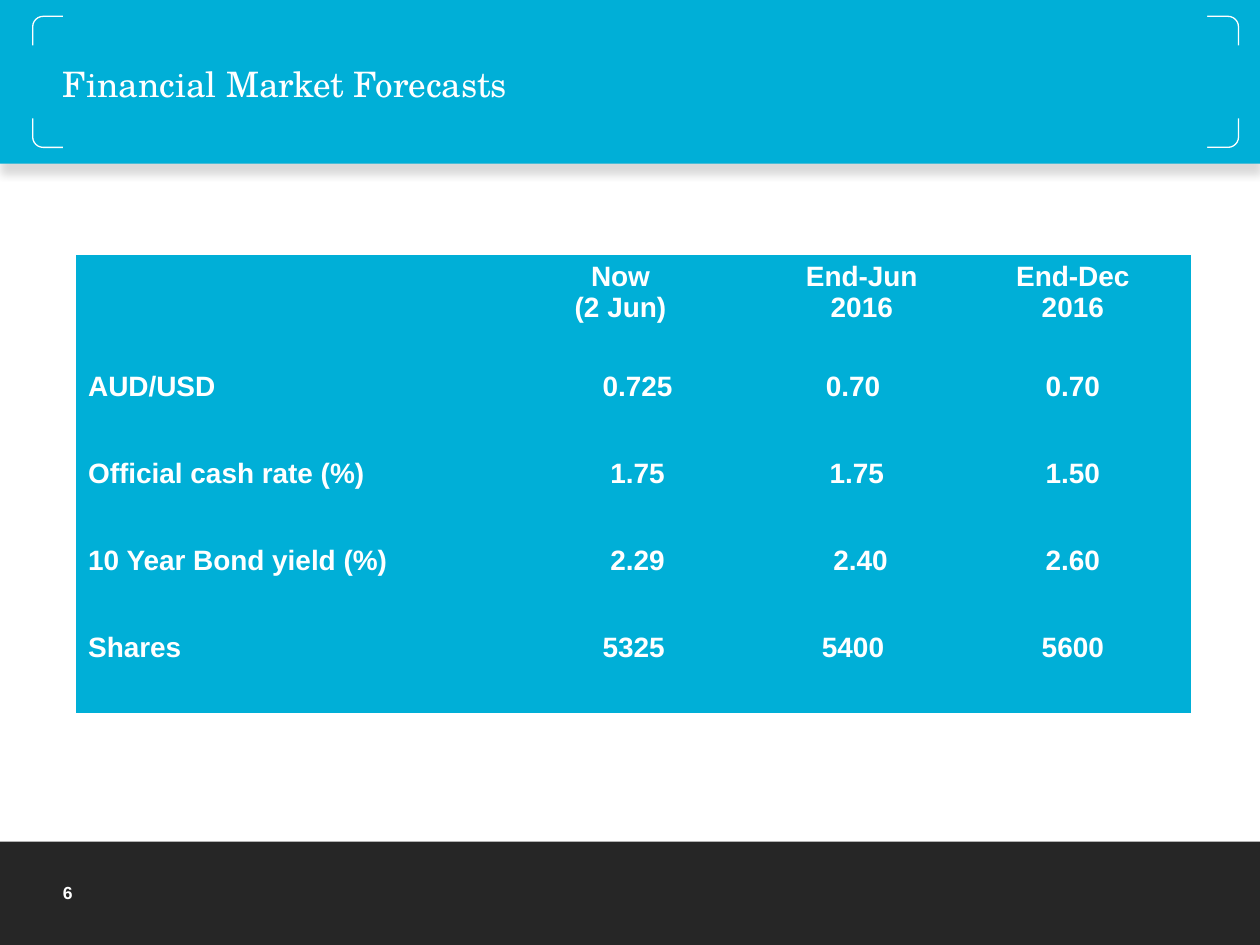
import typing

import pptx
import pptx.dml.color
import pptx.enum.shapes
import pptx.enum.text
import pptx.oxml
import pptx.oxml.ns
import pptx.util

WHITE = pptx.dml.color.RGBColor(0xFF, 0xFF, 0xFF)
CYAN = pptx.dml.color.RGBColor(0x00, 0xAF, 0xD7)
CHARCOAL = pptx.dml.color.RGBColor(0x26, 0x26, 0x26)

SLIDE_WIDTH = pptx.util.Inches(10)
SLIDE_HEIGHT = pptx.util.Inches(7.5)
GRID_COLUMNS, GRID_ROWS = 1000, 750
COLUMN = SLIDE_WIDTH // GRID_COLUMNS
ROW = SLIDE_HEIGHT // GRID_ROWS

BODY_FONT = "Arial"
TITLE_FONT = "TeX Gyre Schola"
NO_TABLE_STYLE = "{2D5ABB26-0587-4C30-8999-92F81FD0307C}"
BANNER_SHADOW = (
    '<a:effectLst xmlns:a="http://schemas.openxmlformats.org/drawingml/2006/main">'
    '<a:outerShdw blurRad="63500" dist="63500" dir="5400000" algn="t" rotWithShape="0">'
    '<a:srgbClr val="000000"><a:alpha val="15000"/></a:srgbClr>'
    "</a:outerShdw></a:effectLst>"
)

COLUMN_WIDTHS = [293, 45, 173, 39, 148, 187]
ROW_HEIGHTS = [88, 69, 69, 69, 69]
CELL_PADDING = 10
HEADINGS = [
    (0, 1, 0, ""),
    (1, 3, 22, "Now\n(2 Jun)"),
    (4, 1, 0, "End-Jun 2016"),
    (5, 1, 0, "End-Dec\n2016"),
]
FORECASTS = [
    ("AUD/USD", (43, "0.725"), (25, "0.70"), "0.70"),
    ("Official cash rate (%)", (43, "1.75"), (31, "1.75"), "1.50"),
    ("10 Year Bond yield (%)", (43, "2.29"), (37, "2.40"), "2.60"),
    ("Shares", (37, "5325"), (25, "5400"), "5600"),
]


class Box(typing.NamedTuple):
    """A region in grid columns and rows."""

    left: int
    top: int
    width: int
    height: int

    def inner(self, left, top, width, height):
        """Return a box placed relative to this one."""
        return Box(self.left + left, self.top + top, width, height)

    def lengths(self):
        """Return left, top, width and height as slide lengths."""
        return self.left * COLUMN, self.top * ROW, self.width * COLUMN, self.height * ROW


def style_font(paragraph, name, size, bold):
    """Set the white font of a paragraph."""
    font = paragraph.font
    font.name, font.size, font.bold = name, pptx.util.Pt(size), bold
    font.color.rgb = WHITE


def add_panel(shapes, box, color, kind=pptx.enum.shapes.MSO_SHAPE.RECTANGLE):
    """Add a flat, borderless shape."""
    panel = shapes.add_shape(kind, *box.lengths())
    panel.shadow.inherit = False
    panel.fill.solid()
    panel.fill.fore_color.rgb = color
    panel.line.fill.background()
    return panel


def add_label(shapes, box, text, name, size, bold):
    """Add a vertically centred line of text."""
    frame = shapes.add_textbox(*box.lengths()).text_frame
    frame.word_wrap = True
    frame.vertical_anchor = pptx.enum.text.MSO_ANCHOR.MIDDLE
    frame.text = text
    style_font(frame.paragraphs[0], name, size, bold)


def add_banner(slide, box, title):
    """Add the title banner with its four rounded corner marks."""
    banner = add_panel(slide.shapes, box, CYAN)
    properties = banner.element.spPr
    properties.remove(properties.find(pptx.oxml.ns.qn("a:effectLst")))
    properties.append(pptx.oxml.parse_xml(BANNER_SHADOW))

    corners = slide.shapes.add_group_shape().shapes
    outline = add_panel(corners, box.inner(26, 13, 957, 104), CYAN,
                        pptx.enum.shapes.MSO_SHAPE.ROUNDED_RECTANGLE)
    outline.adjustments[0] = 0.08
    outline.line.color.rgb = WHITE
    outline.line.width = pptx.util.Pt(0.75)
    for mask in (box.inner(15, 36, 975, 58), box.inner(50, 6, 908, 118)):
        add_panel(corners, mask, CYAN)

    add_label(slide.shapes, box.inner(40, 44, 918, 44), title, TITLE_FONT, 20, False)


def add_footer(slide, box, number):
    """Add the dark footer with the page number."""
    add_panel(slide.shapes, box, CHARCOAL)
    add_label(slide.shapes, box.inner(40, 27, 116, 27), number, BODY_FONT, 10, True)


def fill_cell(table, row, column, span, indent, text):
    """Write a cell across its span, centred except in the first column."""
    cell = table.cell(row, column)
    if span > 1:
        cell.merge(table.cell(row, column + span - 1))
    cell.margin_left = (CELL_PADDING + indent) * COLUMN
    cell.text = text
    align = pptx.enum.text.PP_ALIGN
    for paragraph in cell.text_frame.paragraphs:
        paragraph.alignment = align.CENTER if column else align.LEFT
        style_font(paragraph, BODY_FONT, 16, True)


def add_forecast_table(slide, box):
    """Add the table of market forecasts."""
    frame = slide.shapes.add_table(len(ROW_HEIGHTS), len(COLUMN_WIDTHS), *box.lengths())
    table = frame.table
    table.first_row = table.horz_banding = False
    for style in frame.element.iter(pptx.oxml.ns.qn("a:tableStyleId")):
        style.text = NO_TABLE_STYLE
    for column, width in zip(table.columns, COLUMN_WIDTHS):
        column.width = width * COLUMN
    for row, height in zip(table.rows, ROW_HEIGHTS):
        row.height = height * ROW
    for cell in table.iter_cells():
        cell.fill.solid()
        cell.fill.fore_color.rgb = CYAN

    for heading in HEADINGS:
        fill_cell(table, 0, *heading)
    for row, (measure, now, june, december) in enumerate(FORECASTS, start=1):
        fill_cell(table, row, 0, 2, 0, measure)
        fill_cell(table, row, 2, 1, *now)
        fill_cell(table, row, 3, 2, *june)
        fill_cell(table, row, 5, 1, 0, december)


def main():
    """Build and save the slide."""
    presentation = pptx.Presentation()
    presentation.slide_width = SLIDE_WIDTH
    presentation.slide_height = SLIDE_HEIGHT
    slide = presentation.slides.add_slide(presentation.slide_layouts[6])
    add_footer(slide, Box(0, 668, GRID_COLUMNS, 82), "6")
    add_banner(slide, Box(0, 0, GRID_COLUMNS, 130), "Financial Market Forecasts")
    add_forecast_table(slide, Box(60, 202, sum(COLUMN_WIDTHS), sum(ROW_HEIGHTS)))
    presentation.save("out.pptx")


if __name__ == "__main__":
    main()
